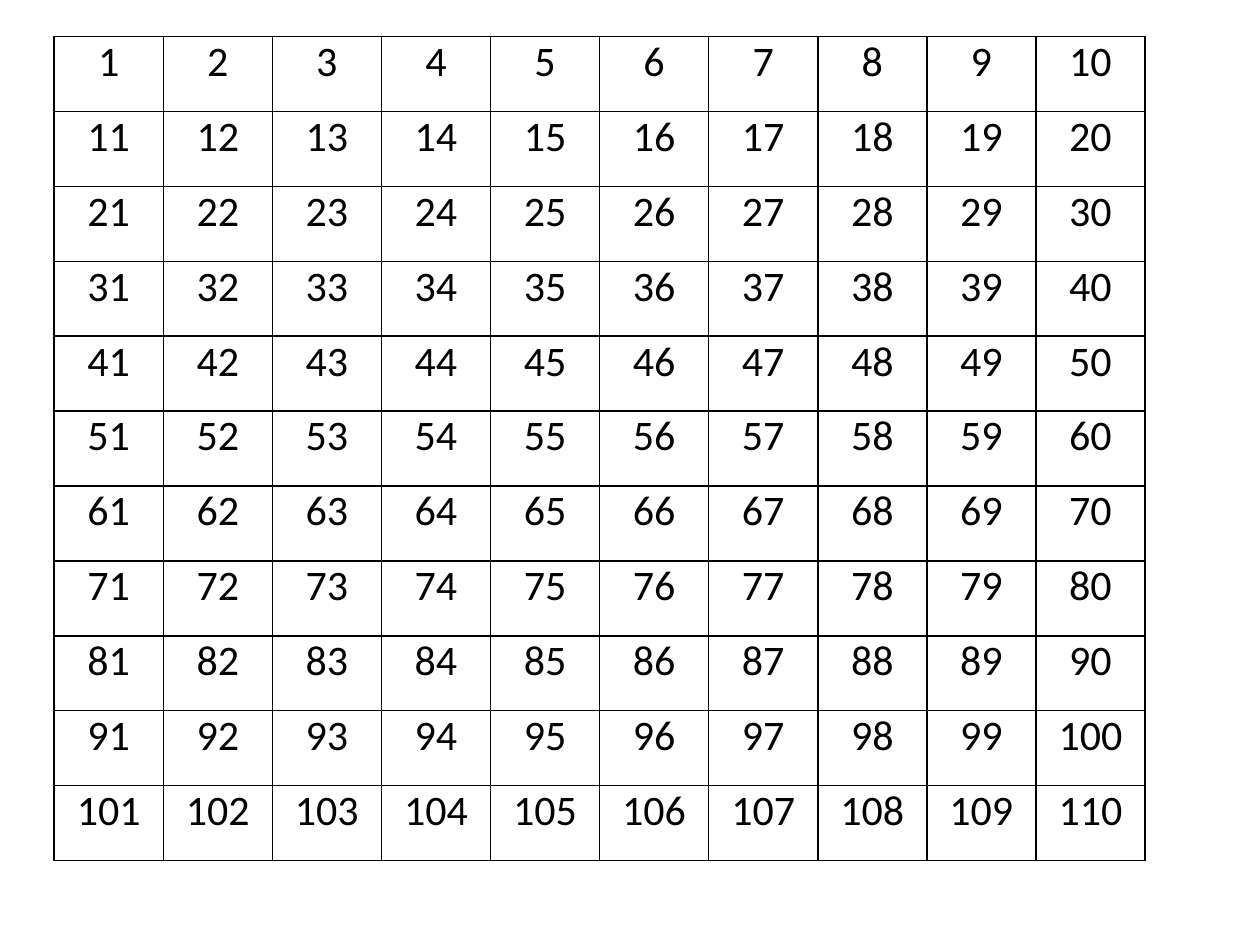
import lxml.etree
import pptx
import pptx.dml.color
import pptx.enum.text
import pptx.oxml.ns
import pptx.util

ROWS, COLUMNS = 11, 10
NUMBERS = [[row * COLUMNS + column + 1 for column in range(COLUMNS)] for row in range(ROWS)]
COLORS = {"ink": "000000", "line": "000000"}
LEFT, TOP, WIDTH, HEIGHT = (pptx.util.Inches(value) for value in (0.43, 0.29, 8.66, 6.54))
BORDER_WIDTH = pptx.util.Pt(1)
FONT_FORMAT = {"name": "Calibri", "size": pptx.util.Pt(24), "bold": False}
CELL_FORMAT = {
    "margin_left": pptx.util.Inches(0.07),
    "margin_right": pptx.util.Inches(0.07),
    "margin_top": 0,
    "margin_bottom": 0,
    "vertical_anchor": pptx.enum.text.MSO_ANCHOR.TOP,
}
TABLE_FORMAT = {"first_row": False, "horz_banding": False}


def apply_format(target, values):
    for name, value in values.items():
        setattr(target, name, value)


def add_borders(cell):
    properties = cell._tc.get_or_add_tcPr()
    for side in ("a:lnL", "a:lnR", "a:lnT", "a:lnB"):
        line = lxml.etree.SubElement(properties, pptx.oxml.ns.qn(side), w=str(BORDER_WIDTH))
        fill = lxml.etree.SubElement(line, pptx.oxml.ns.qn("a:solidFill"))
        lxml.etree.SubElement(fill, pptx.oxml.ns.qn("a:srgbClr"), val=COLORS["line"])


def fill_cell(cell, number):
    add_borders(cell)
    cell.fill.background()
    apply_format(cell, CELL_FORMAT)
    para = cell.text_frame.paragraphs[0]
    para.alignment = pptx.enum.text.PP_ALIGN.CENTER
    span = para.add_run()
    span.text = str(number)
    apply_format(span.font, FONT_FORMAT)
    span.font.color.rgb = pptx.dml.color.RGBColor.from_string(COLORS["ink"])


def main():
    deck = pptx.Presentation()
    deck.slide_width = pptx.util.Inches(10)
    deck.slide_height = pptx.util.Inches(7.5)
    page = deck.slides.add_slide(deck.slide_layouts[6])
    grid = page.shapes.add_table(ROWS, COLUMNS, LEFT, TOP, WIDTH, HEIGHT).table
    apply_format(grid, TABLE_FORMAT)
    for row, numbers in enumerate(NUMBERS):
        for column, number in enumerate(numbers):
            fill_cell(grid.cell(row, column), number)
    deck.save("out.pptx")


if __name__ == "__main__":
    main()
